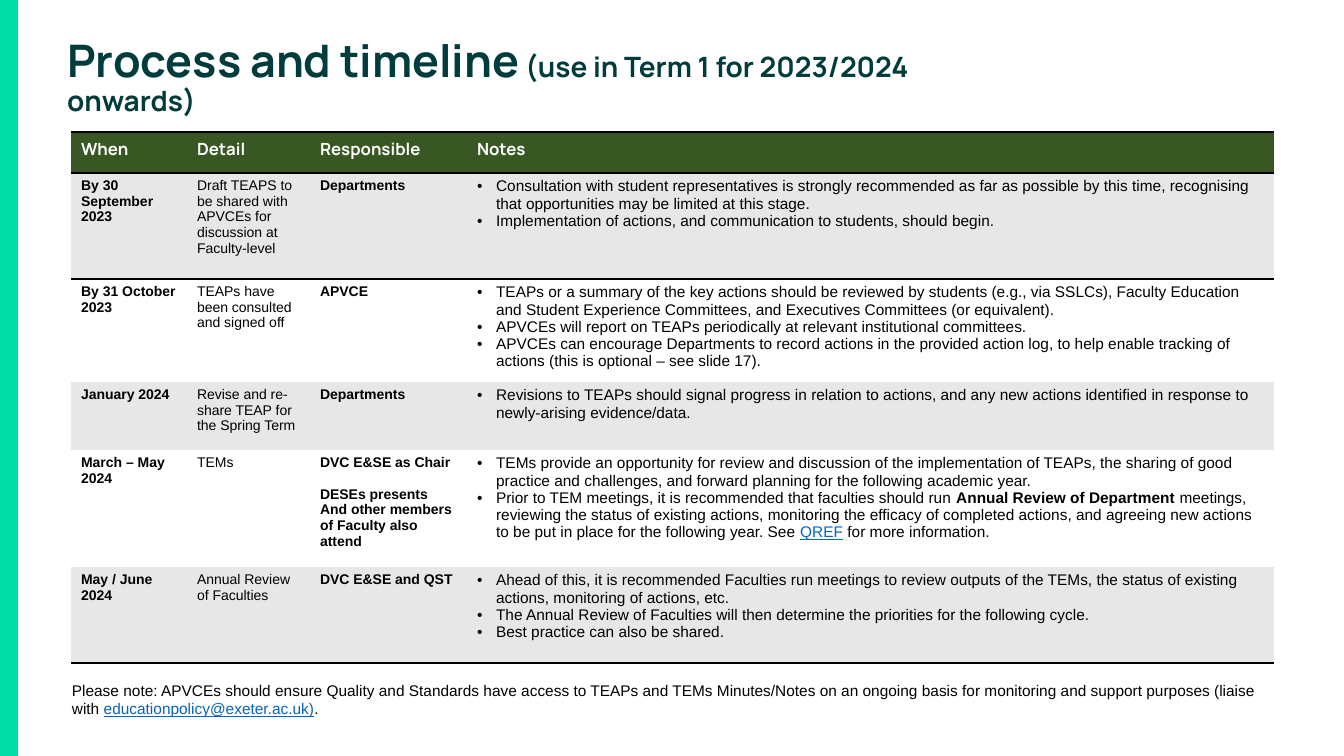
import pptx
import pptx.util
import pptx.dml.color
import pptx.enum.shapes
import pptx.enum.text
import pptx.oxml
import pptx.oxml.ns

PX = 914400 / 100.8  # EMU per px
GREEN = pptx.dml.color.RGBColor(0x01, 0xDC, 0xA5)
TEAL = pptx.dml.color.RGBColor(0x00, 0x3C, 0x3B)
HEADER = pptx.dml.color.RGBColor(0x38, 0x57, 0x23)
BAND = pptx.dml.color.RGBColor(0xE7, 0xE7, 0xE7)
WHITE = pptx.dml.color.RGBColor(0xFF, 0xFF, 0xFF)
BLACK = pptx.dml.color.RGBColor(0x00, 0x00, 0x00)
LINK = pptx.dml.color.RGBColor(0x05, 0x63, 0xC1)
NO_STYLE = "{2D5ABB26-0587-4C30-8999-92F81FD0307C}"

COLUMNS = [116, 123, 157, 807]
ROW_HEIGHTS = [41, 106, 103, 68, 117, 96]
HEADINGS = ["When", "Detail", "Responsible", "Notes"]
# Each row: when, detail, responsible paragraphs, notes (a note is a list of (text, kind))
ROWS = [
    ("By 30  September 2023",
     "Draft TEAPS to be shared with APVCEs for discussion at Faculty-level ",
     ["Departments"],
     [[("Consultation with student representatives is strongly recommended as far as possible by this time, "
        "recognising that opportunities may be limited at this stage.", "")],
      [("Implementation of actions, and communication to students, should begin.", "")]]),
    ("By 31 October 2023", "TEAPs have been consulted and signed off", ["APVCE"],
     [[("TEAPs or a summary of the key actions should be reviewed by students (e.g., via SSLCs), Faculty Education "
        "and Student Experience Committees, and Executives Committees (or equivalent).", "")],
      [("APVCEs will report on TEAPs periodically at relevant institutional committees.", "")],
      [("APVCEs can encourage Departments to record actions in the provided action log, to help enable tracking of "
        "actions (this is optional – see slide 17).", "")]]),
    ("January 2024", "Revise and re-share TEAP for the Spring Term", ["Departments"],
     [[("Revisions to TEAPs should signal progress in relation to actions, and any new actions identified in "
        "response to newly-arising evidence/data.", "")]]),
    ("March – May 2024", "TEMs",
     ["DVC E&SE as Chair", "DESEs presents", "And other members of Faculty also attend"],
     [[("TEMs provide an opportunity for review and discussion of the implementation of TEAPs, the sharing of good "
        "practice and challenges, and forward planning for the following academic year.", "")],
      [("Prior to TEM meetings, it is recommended that faculties should run ", ""),
       ("Annual Review of Department ", "bold"),
       ("meetings, reviewing the status of existing actions, monitoring the efficacy of completed actions, and "
        "agreeing new actions to be put in place for the following year. See ", ""),
       ("QREF", "link"), (" for more information.", "")]]),
    ("May / June 2024", "Annual Review of Faculties", ["DVC E&SE and QST"],
     [[("Ahead of this, it is recommended Faculties run meetings to review outputs of the TEMs, the status of "
        "existing actions, monitoring of actions, etc.", "")],
      [("The Annual Review of Faculties will then determine the priorities for the following cycle.", "")],
      [("Best practice can also be shared.", "")]]),
]
FOOTNOTE = [
    ("Please note: APVCEs should ensure Quality and Standards have access to TEAPs and TEMs Minutes/Notes on an "
     "ongoing basis for monitoring and support purposes (liaise with ", ""),
    ("educationpolicy@exeter.ac.uk)", "link"), (".", "")]


def px(n):
    return pptx.util.Emu(round(n * PX))


def style(r, size, color=BLACK, bold=False, font="Arial"):
    r.font.size = pptx.util.Pt(size)
    r.font.name = font
    r.font.bold = bold
    r.font.color.rgb = color


def write_runs(p, runs, size):
    for text, kind in runs:
        r = p.add_run()
        r.text = text
        style(r, size, LINK if kind == "link" else BLACK, kind == "bold")
        if kind == "link":
            r.font.underline = True


def write_lines(tf, lines, *look):
    tf.text = "\n".join(lines)
    for p in tf.paragraphs:
        for r in p.runs:
            style(r, *look)


def add_bullet(p):
    pPr = p._p.get_or_add_pPr()
    indent = px(19)
    pPr.set("marL", str(indent))
    pPr.set("indent", str(-indent))
    ns = pptx.oxml.ns.nsdecls("a")
    pPr.append(pptx.oxml.parse_xml(f'<a:buFont {ns} typeface="Arial"/>'))
    pPr.append(pptx.oxml.parse_xml(f'<a:buChar {ns} char="•"/>'))


def write_notes(tf, notes):
    for i, runs in enumerate(notes):
        p = tf.paragraphs[0] if i == 0 else tf.add_paragraph()
        add_bullet(p)
        write_runs(p, runs, 11)


def format_cell(cell, fill, sides):
    # Borders go before the fill in the cell properties
    tcPr = cell._tc.get_or_add_tcPr()
    for side in sides:
        tcPr.append(pptx.oxml.parse_xml(
            f'<a:ln{side} {pptx.oxml.ns.nsdecls("a")} w="25400"><a:solidFill><a:srgbClr val="{BLACK}"/>'
            f'</a:solidFill></a:ln{side}>'))
    cell.fill.solid()
    cell.fill.fore_color.rgb = fill


def add_side_bar(s, x, y, w, h):
    sp = s.shapes.add_shape(pptx.enum.shapes.MSO_SHAPE.RECTANGLE, px(x), px(y), px(w), px(h))
    sp.shadow.inherit = False
    sp.fill.solid()
    sp.fill.fore_color.rgb = GREEN
    sp.line.fill.background()


def add_title(s, x, y, w, h):
    sp = s.shapes.title
    sp.left, sp.top, sp.width, sp.height = px(x), px(y), px(w), px(h)
    tf = sp.text_frame
    tf.word_wrap = True
    tf.auto_size = pptx.enum.text.MSO_AUTO_SIZE.NONE
    tf.vertical_anchor = pptx.enum.text.MSO_ANCHOR.TOP
    p = tf.paragraphs[0]
    p.alignment = pptx.enum.text.PP_ALIGN.LEFT
    p.line_spacing = 0.9
    for text, size in [("Process and timeline", 32), (" (use in Term 1 for 2023/2024 onwards)", 20)]:
        r = p.add_run()
        r.text = text
        style(r, size, TEAL, True, "Manrope")


def add_timeline(s, x, y, w, h):
    frame = s.shapes.add_table(len(ROW_HEIGHTS), len(COLUMNS), px(x), px(y), px(w), px(h))
    for style_id in frame.element.iter(pptx.oxml.ns.qn("a:tableStyleId")):
        style_id.text = NO_STYLE
    table = frame.table
    table.horz_banding = False
    for column, width in zip(table.columns, COLUMNS):
        column.width = px(width)
    for row, height in zip(table.rows, ROW_HEIGHTS):
        row.height = px(height)

    # Header row
    for cell, heading in zip(table.rows[0].cells, HEADINGS):
        format_cell(cell, HEADER, "TB")
        write_lines(cell.text_frame, [heading], 12, WHITE, True, "Manrope")

    # Body rows
    for i, (when, detail, people, notes) in enumerate(ROWS, 1):
        cells = list(table.rows[i].cells)
        for cell in cells:
            sides = "T" if i == 1 else "B" if i == len(ROWS) else ""
            format_cell(cell, BAND if i % 2 else WHITE, sides)
        write_lines(cells[0].text_frame, [when], 10, BLACK, True)
        write_lines(cells[1].text_frame, [detail], 10)
        write_lines(cells[2].text_frame, people, 10, BLACK, True)
        if len(people) > 1:
            cells[2].text_frame.paragraphs[1].space_before = pptx.util.Pt(11.5)
        write_notes(cells[3].text_frame, notes)


def add_footnote(s, x, y, w, h):
    tf = s.shapes.add_textbox(px(x), px(y), px(w), px(h)).text_frame
    tf.word_wrap = True
    write_runs(tf.paragraphs[0], FOOTNOTE, 11)


def main():
    prs = pptx.Presentation()
    prs.slide_width, prs.slide_height = px(1344), px(756)
    s = prs.slides.add_slide(prs.slide_layouts[5])
    add_side_bar(s, 0, 0, 18, 756)
    add_title(s, 57, 34, 949, 102)
    add_timeline(s, 71, 132, sum(COLUMNS), sum(ROW_HEIGHTS))
    add_footnote(s, 62, 676, 1219, 47)
    prs.save("out.pptx")


if __name__ == "__main__":
    main()
